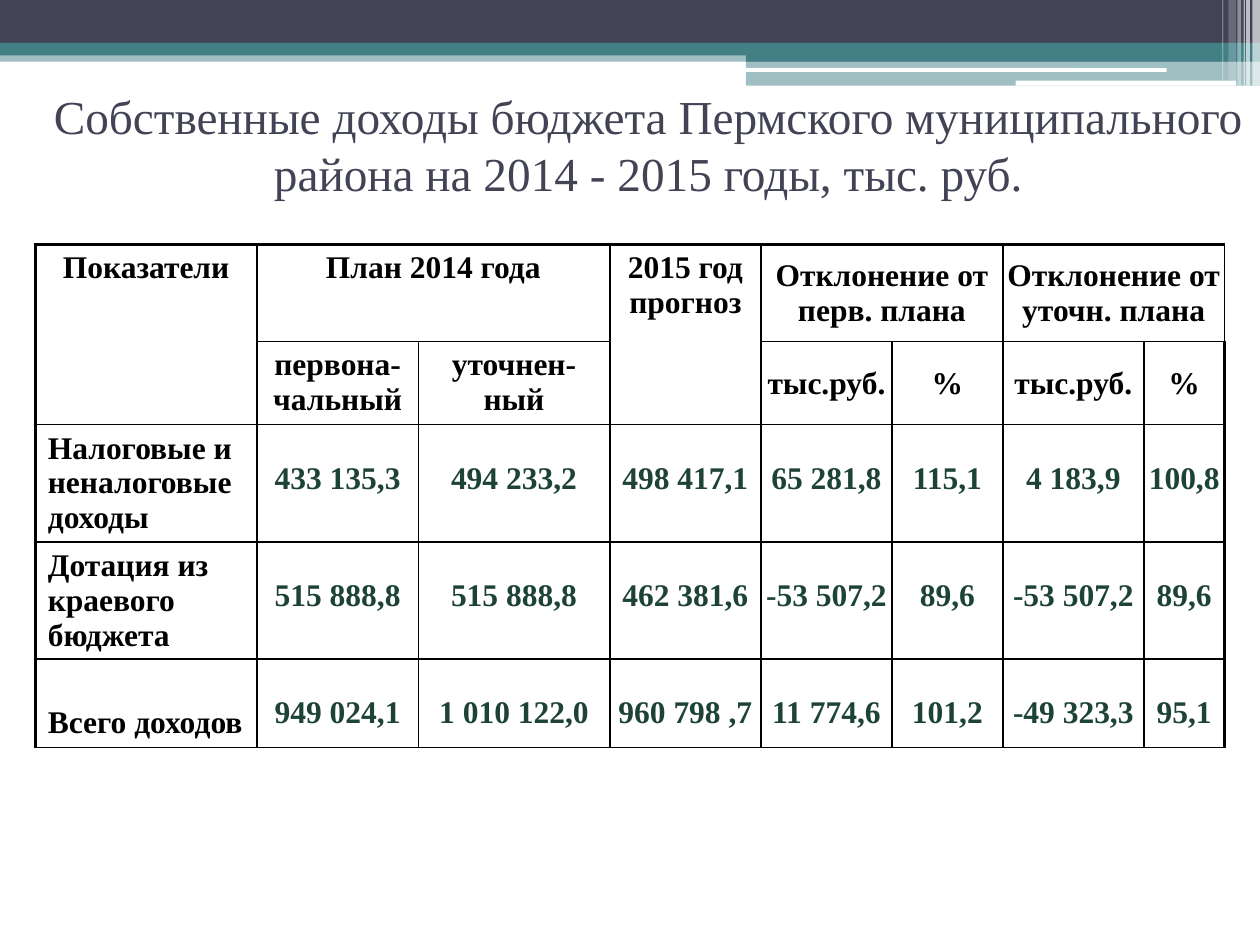
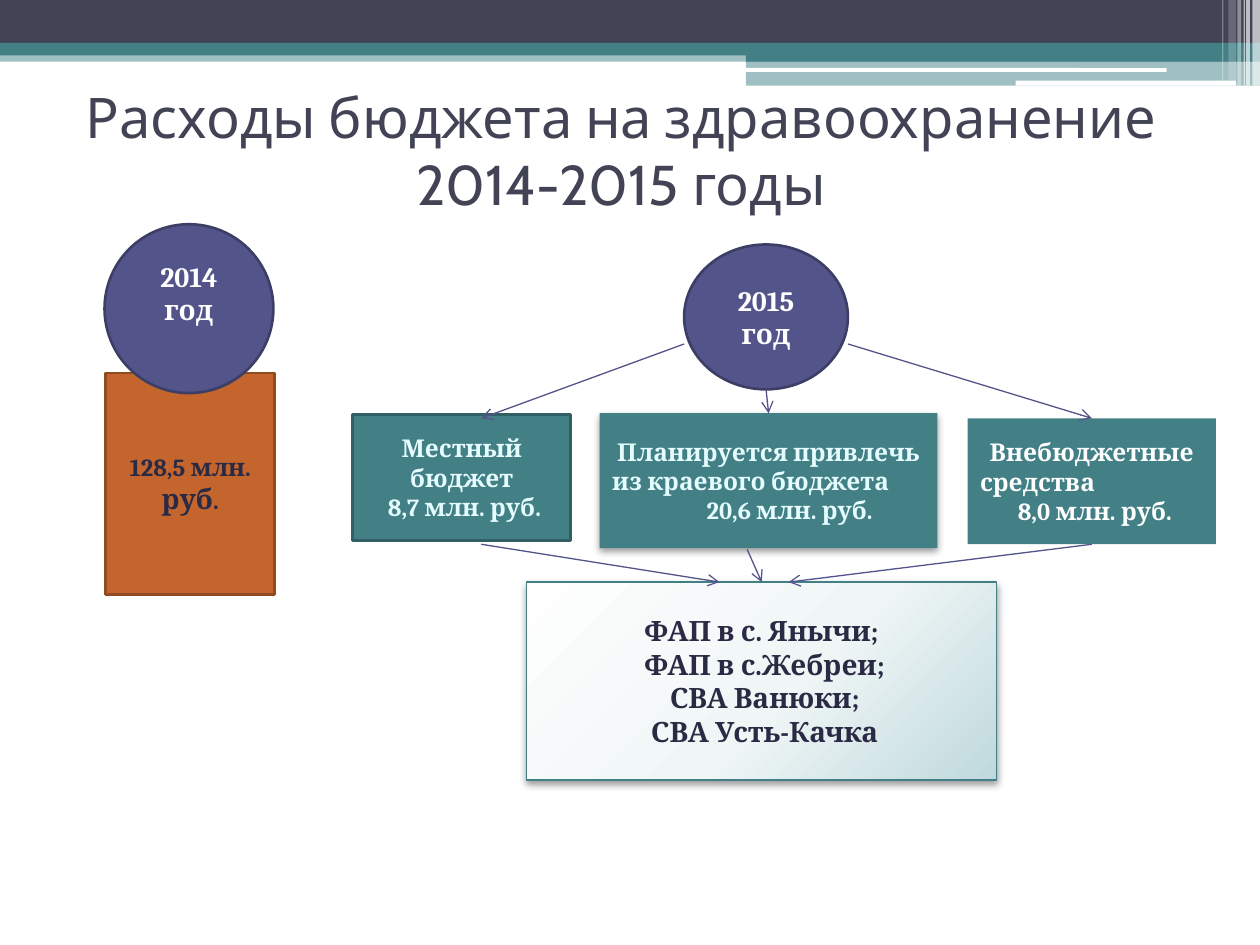
from dataclasses import dataclass
from typing import NamedTuple

from lxml.etree import Element, SubElement
from pptx import Presentation
from pptx.dml.color import RGBColor
from pptx.enum.shapes import MSO_CONNECTOR as Connector, MSO_SHAPE as Shape
from pptx.enum.text import MSO_ANCHOR as Anchor, MSO_AUTO_SIZE as AutoSize, PP_ALIGN as Align
from pptx.oxml.ns import qn
from pptx.util import Inches, Pt


@dataclass(frozen=True)
class Theme:
    """Colours, fonts and type sizes of the presentation."""
    slate: str = "424456"
    teal: str = "438086"
    teal_edge: str = "325F63"
    violet: str = "53548A"
    violet_edge: str = "3D3E66"
    orange: str = "C4652D"
    orange_edge: str = "914B21"
    ink: str = "2A2A45"
    ice: str = "E5FCFF"
    white: str = "FFFFFF"
    black: str = "000000"
    green: str = "1D4337"
    glow: tuple = ((0, "FEFEFE"), (55, "F0F6F6"), (100, "BFD9DD"))
    serif: str = "Times New Roman"
    sans: str = "Cabin"
    diagram: str = "Cambria"
    table_title: int = 27
    diagram_title: int = 32
    table_text: int = 18
    large: int = 16
    small: int = 14


THEME = Theme()


class Box(NamedTuple):
    """A rectangle in inches."""
    left: float
    top: float
    width: float
    height: float

    def inside(self, left, top, width, height):
        """Return a box given relative to this one."""
        return Box(self.left + left, self.top + top, width, height)

    def point(self, x, y):
        """Return a point given relative to this box."""
        return Inches(self.left + x), Inches(self.top + y)

    def lengths(self):
        """Return the four lengths for python-pptx."""
        return [Inches(value) for value in self]


def add_run(paragraph, text, size, font, color, bold=True):
    """Add one formatted run to a paragraph."""
    run = paragraph.add_run()
    run.text = text
    run.font.size, run.font.name, run.font.bold = Pt(size), font, bold
    run.font.color.rgb = RGBColor.from_string(color)


def set_margins(target, left, top, right, bottom):
    """Set the text insets of a cell or a text frame."""
    target.margin_left, target.margin_top = Inches(left), Inches(top)
    target.margin_right, target.margin_bottom = Inches(right), Inches(bottom)


def add_color(parent, color, alpha=None):
    """Append a colour element with an optional opacity in percent."""
    node = SubElement(parent, qn("a:srgbClr"), val=color)
    if alpha is not None:
        SubElement(node, qn("a:alpha"), val=str(alpha * 1000))


def add_block(slide, box, fill, edge=None, edge_width=1.5, kind=Shape.RECTANGLE, alpha=None):
    """Draw a preset shape with a plain fill and an optional edge."""
    shape = slide.shapes.add_shape(kind, *box.lengths())
    shape.shadow.inherit = False
    shape.fill.solid()
    shape.fill.fore_color.rgb = RGBColor.from_string(fill)
    if alpha is not None:
        color = shape._element.spPr.find(".//" + qn("a:srgbClr"))
        SubElement(color, qn("a:alpha"), val=str(alpha * 1000))
    if edge:
        shape.line.color.rgb = RGBColor.from_string(edge)
        shape.line.width = Pt(edge_width)
    else:
        shape.line.fill.background()
    return shape


def add_shadow(shape):
    """Give a shape a soft shadow below it."""
    effects = shape._element.spPr.find(qn("a:effectLst"))
    shadow = SubElement(effects, qn("a:outerShdw"), blurRad=str(Pt(4.1)), dist=str(Pt(2)),
                        dir="5400000", rotWithShape="0")
    add_color(shadow, THEME.black, 40)


def add_glow(shape):
    """Replace the fill by the radial gradient of the theme."""
    gradient = Element(qn("a:gradFill"), rotWithShape="1")
    stops = SubElement(gradient, qn("a:gsLst"))
    for position, color in THEME.glow:
        add_color(SubElement(stops, qn("a:gs"), pos=str(position * 1000)), color)
    focus = SubElement(gradient, qn("a:path"), path="circle")
    SubElement(focus, qn("a:fillToRect"), l="-40000", t="-90000", r="140000", b="190000")
    properties = shape._element.spPr
    properties.replace(properties.find(qn("a:solidFill")), gradient)


def write_lines(shape, lines, color, size):
    """Write centred lines; a line paired with an indent is set from the left."""
    frame = shape.text_frame
    frame.word_wrap, frame.vertical_anchor = True, Anchor.MIDDLE
    for index, line in enumerate(lines):
        text, indent = line if isinstance(line, tuple) else (line, None)
        paragraph = frame.add_paragraph() if index else frame.paragraphs[0]
        paragraph.alignment = Align.CENTER if indent is None else Align.LEFT
        if indent:
            paragraph._p.get_or_add_pPr().set("marL", str(Inches(indent)))
        add_run(paragraph, text, size, THEME.diagram, color)


def add_arrow(slide, start, end, source=None, target=None):
    """Draw an arrow, joined to the bottom of source and the top of target."""
    arrow = slide.shapes.add_connector(Connector.STRAIGHT, *start, *end)
    if source is not None:
        arrow.begin_connect(source, 2)
    if target is not None:
        arrow.end_connect(target, 0)
    arrow.line.color.rgb = RGBColor.from_string(THEME.violet)
    arrow.line.width = Pt(0.75)
    properties = arrow._element.spPr
    SubElement(properties.find(qn("a:ln")), qn("a:tailEnd"), type="arrow")
    SubElement(properties, qn("a:effectLst"))


def draw_header_bands(slide, layout, box):
    """Draw the header bands and move them to the layout."""
    bands = [(0, 0.4, 10, 0.09, THEME.teal, 50), (0, 0, 10, 0.34, THEME.slate, None),
             (0, 0.34, 10, 0.1, THEME.teal, None), (5.92, 0.39, 4.08, 0.1, THEME.teal, None),
             (5.92, 0.48, 4.08, 0.2, THEME.teal, 50)]
    pills = [(5.91, 0.54, 3.35, 0.03), (8.06, 0.64, 1.75, 0.04)]
    stripes = [(9.94, 0.06, 0.68, 65), (9.89, 0.03, 0.68, 65), (9.87, 0.01, 0.68, 60),
               (9.82, 0.03, 0.68, 40), (9.75, 0.06, 0.64, 20), (9.7, 0.01, 0.64, 30)]
    shapes = [add_block(slide, box.inside(*place), color, alpha=alpha)
              for *place, color, alpha in bands]
    shapes += [add_block(slide, box.inside(*place), THEME.white, kind=Shape.ROUNDED_RECTANGLE)
               for place in pills]
    shapes += [add_block(slide, box.inside(left, 0, width, height), THEME.white, alpha=alpha)
               for left, width, height, alpha in stripes]
    for index, shape in enumerate(shapes):
        layout.shapes._spTree.insert(2 + index, shape._element)


def set_title(slide, box, lines, size, font):
    """Place and format the title placeholder."""
    title = slide.shapes.title
    title.left, title.top, title.width, title.height = box.lengths()
    frame = title.text_frame
    frame.word_wrap, frame.auto_size = True, AutoSize.NONE
    frame.vertical_anchor = Anchor.MIDDLE
    paragraph = frame.paragraphs[0]
    paragraph.alignment = Align.CENTER
    for index, line in enumerate(lines):
        if index:
            paragraph.add_line_break()
        add_run(paragraph, line, size, font, THEME.slate, bold=False)


def set_borders(cell, widths):
    """Set the left, right, top and bottom borders of a cell."""
    properties = cell._tc.get_or_add_tcPr()
    for index, (side, width) in enumerate(zip("LRTB", widths)):
        line = Element(qn(f"a:ln{side}"), w=str(Pt(width)))
        add_color(SubElement(line, qn("a:solidFill")), THEME.black)
        properties.insert(index, line)


def fill_cell(cell, text, color, margins, align=Align.CENTER, anchor=Anchor.TOP):
    """Write one table cell."""
    set_margins(cell, *margins)
    cell.vertical_anchor = anchor
    paragraph = cell.text_frame.paragraphs[0]
    paragraph.alignment = align
    add_run(paragraph, text, THEME.table_text, THEME.serif, color)


def draw_income_table(slide, box):
    """Draw the table of own budget income."""
    column_widths = [1.76, 1.28, 1.52, 1.2, 1.04, 0.88, 1.12, 0.64]
    row_heights = [0.77, 0.66, 0.93, 0.93, 0.7]
    loose, tight = (0.1, 0.05, 0.1, 0.05), (0.01, 0.01, 0.01, 0)
    headers = [(0, 0, 1, 0, "Показатели"), (0, 1, 0, 2, "План 2014 года"),
               (0, 3, 1, 3, "2015 год прогноз"), (0, 4, 0, 5, "Отклонение от перв. плана"),
               (0, 6, 0, 7, "Отклонение от уточн. плана"), (1, 1, 1, 1, "первона-чальный"),
               (1, 2, 1, 2, "уточнен-ный"), (1, 4, 1, 4, "тыс.руб."), (1, 5, 1, 5, "%"),
               (1, 6, 1, 6, "тыс.руб."), (1, 7, 1, 7, "%")]
    records = [
        ("Налоговые и неналоговые доходы", "433 135,3", "494 233,2", "498 417,1",
         "65 281,8", "115,1", "4 183,9", "100,8"),
        ("Дотация из краевого бюджета", "515 888,8", "515 888,8", "462 381,6",
         "-53 507,2", "89,6", "-53 507,2", "89,6"),
        ("Всего доходов", "949 024,1", "1 010 122,0", "960 798 ,7",
         "11 774,6", "101,2", "-49 323,3", "95,1")]
    table = slide.shapes.add_table(len(row_heights), len(column_widths), *box.lengths()).table
    table.first_row = table.horz_banding = False
    for column, width in zip(table.columns, column_widths):
        column.width = Inches(width)
    for row, height in zip(table.rows, row_heights):
        row.height = Inches(height)
    for row_index, row in enumerate(table.rows):
        for column_index, cell in enumerate(row.cells):
            cell.fill.background()
            outer = (column_index == 0, column_index == len(column_widths) - 1, row_index == 0, False)
            set_borders(cell, [2.25 if edge else 1 for edge in outer])
    for top, left, bottom, right, text in headers:
        cell = table.cell(top, left)
        if (top, left) != (bottom, right):
            cell.merge(table.cell(bottom, right))
        compact = left >= 4
        fill_cell(cell, text, THEME.black, tight if compact else loose,
                  anchor=Anchor.MIDDLE if compact else Anchor.TOP)
    for row_index, (name, *values) in enumerate(records, start=2):
        last = row_index == len(row_heights) - 1
        fill_cell(table.cell(row_index, 0), name, THEME.black,
                  (0.1, 0.37, 0.1, 0.05) if last else loose, Align.LEFT)
        for column_index, value in enumerate(values, start=1):
            fill_cell(table.cell(row_index, column_index), value, THEME.green, (0.01, 0.29, 0.01, 0))


def draw_spending_2014(slide, box):
    """Draw the 2014 spending block under its year circle."""
    amount = add_block(slide, box.inside(0.01, 1.18, 1.34, 1.76), THEME.orange, THEME.orange_edge)
    write_lines(amount, ["128,5 млн. "], THEME.ink, THEME.small)
    paragraph = amount.text_frame.paragraphs[0]
    add_run(paragraph, "руб", THEME.large, THEME.diagram, THEME.ink)
    add_run(paragraph, ".", THEME.small, THEME.diagram, THEME.ink)
    year = add_block(slide, box.inside(0, 0, 1.34, 1.34), THEME.violet, THEME.violet_edge,
                     kind=Shape.OVAL)
    write_lines(year, ["2014 год"], THEME.white, THEME.large)
    set_margins(year.text_frame, 0.1, 0.05, 0.1, 0.3)


def draw_funding_2015(slide, box):
    """Draw the 2015 funding sources and the sites they pay for."""
    local = add_block(slide, box.inside(0, 1.35, 1.73, 1), THEME.teal, THEME.teal_edge)
    write_lines(local, ["Местный бюджет", " 8,7 млн. руб."], THEME.ice, THEME.small)
    regional = add_block(slide, box.inside(1.96, 1.34, 2.68, 1.07), THEME.teal)
    add_shadow(regional)
    write_lines(regional, ["Планируется привлечь", ("из краевого бюджета", 0),
                           ("20,6 млн. руб.", 0.75)], THEME.ice, THEME.small)
    sites = add_block(slide, box.inside(1.38, 2.68, 3.73, 1.57), THEME.white, THEME.teal, 0.75)
    add_glow(sites)
    add_shadow(sites)
    write_lines(sites, ["ФАП в с. Янычи;", " ФАП в с.Жебреи;", " СВА Ванюки;", " СВА Усть-Качка"],
                THEME.ink, THEME.large)
    external = add_block(slide, box.inside(4.88, 1.38, 1.97, 1), THEME.teal)
    write_lines(external, ["Внебюджетные", ("средства", 0), ("8,0 млн. руб.", 0.3)],
                THEME.white, THEME.small)
    year = add_block(slide, box.inside(2.63, 0, 1.3, 1.15), THEME.violet, THEME.violet_edge,
                     kind=Shape.OVAL)
    write_lines(year, ["2015 год"], THEME.white, THEME.large)
    arrows = [((2.63, 0.79), (1.02, 1.38), None, None), ((3.28, 1.15), (3.3, 1.34), None, regional),
              ((3.93, 0.79), (5.86, 1.38), None, external), ((1.02, 2.38), (2.91, 2.68), None, None),
              ((3.13, 2.42), (3.25, 2.68), None, sites), ((5.86, 2.38), (3.46, 2.68), external, None)]
    for start, end, source, target in arrows:
        add_arrow(slide, box.point(*start), box.point(*end), source, target)


def main():
    """Build the two slides and save them."""
    presentation = Presentation()
    presentation.slide_width, presentation.slide_height = Inches(10), Inches(7.5)
    layout = presentation.slide_layouts[5]
    income, health = [presentation.slides.add_slide(layout) for _ in range(2)]
    draw_header_bands(income, layout, Box(0, 0, 10, 0.68))
    set_title(income, Box(0.3, 0.52, 9.69, 1.25),
              ["Собственные доходы бюджета Пермского муниципального района на 2014 - 2015 годы, тыс. руб."],
              THEME.table_title, THEME.serif)
    draw_income_table(income, Box(0.28, 1.94, 9.44, 3.99))
    set_title(health, Box(0.43, 0.68, 9, 1.02),
              ["Расходы бюджета на здравоохранение", "2014-2015 годы"],
              THEME.diagram_title, THEME.sans)
    draw_spending_2014(health, Box(0.83, 1.78, 1.35, 2.94))
    draw_funding_2015(health, Box(2.8, 1.94, 6.85, 4.25))
    presentation.save("out.pptx")


if __name__ == "__main__":
    main()
